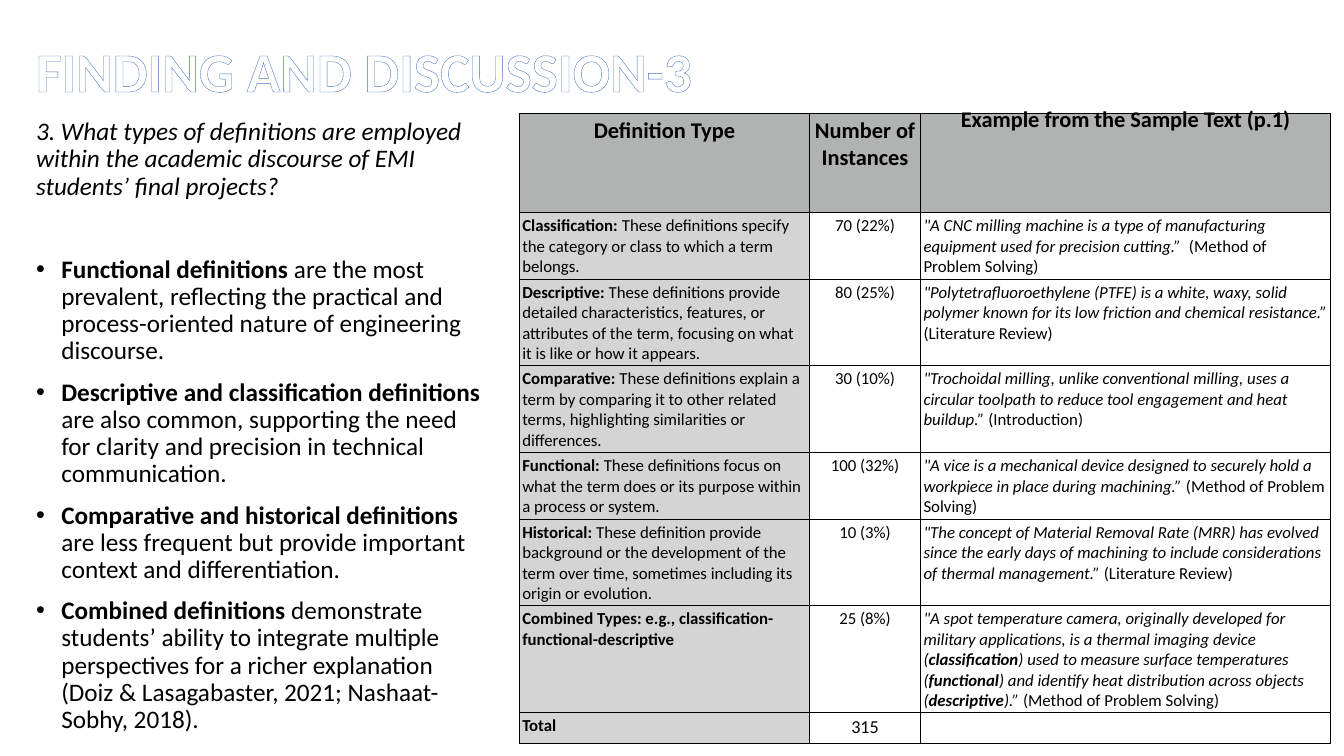
from dataclasses import dataclass

from lxml import etree
from pptx import Presentation
from pptx.dml.color import RGBColor
from pptx.enum.shapes import MSO_SHAPE
from pptx.enum.text import MSO_ANCHOR, PP_ALIGN
from pptx.oxml import parse_xml
from pptx.oxml.ns import nsdecls, qn
from pptx.util import Inches, Pt

RECTANGLE = MSO_SHAPE.RECTANGLE
TOP = MSO_ANCHOR.TOP
MIDDLE = MSO_ANCHOR.MIDDLE
LEFT = PP_ALIGN.LEFT
CENTER = PP_ALIGN.CENTER


@dataclass(frozen=True)
class Theme:
    font: str = "Calibri"
    white: RGBColor = RGBColor(0xFF, 0xFF, 0xFF)
    black: RGBColor = RGBColor(0, 0, 0)
    header: RGBColor = RGBColor(0xB0, 0xB3, 0xB2)
    label: RGBColor = RGBColor(0xD4, 0xD4, 0xD4)
    outline: str = "4472C4"
    title_size: Pt = Pt(39.6)
    body_size: Pt = Pt(18)
    header_size: Pt = Pt(16)
    cell_size: Pt = Pt(12)
    total_size: Pt = Pt(13)


theme = Theme()


def add_runs(paragraph, runs, size, color=theme.black):
    for text, style in runs:
        run = paragraph.add_run()
        run.text = text
        run.font.name = theme.font
        run.font.size = size
        run.font.color.rgb = color
        run.font.bold = "b" in style
        run.font.italic = "i" in style


prs = Presentation()
prs.slide_width = Inches(13.33)
prs.slide_height = Inches(7.5)
slide = prs.slides.add_slide(prs.slide_layouts[6])

title = slide.shapes.add_textbox(Inches(0.26), Inches(0.42), Inches(11.5), Inches(0.63)).text_frame
title.word_wrap = True
title.vertical_anchor = MIDDLE
heading = title.paragraphs[0]
heading.line_spacing = 0.9
add_runs(heading, [("FINDING AND DISCUSSION-3", "b")], theme.title_size, theme.white)
heading.runs[0].font._element.insert(0, parse_xml(
    f'<a:ln {nsdecls("a")} w="{Pt(0.8)}"><a:solidFill>'
    f'<a:srgbClr val="{theme.outline}"/></a:solidFill></a:ln>'))

findings_panel = slide.shapes.add_shape(RECTANGLE, Inches(0.26), Inches(1.13), Inches(4.61), Inches(6.24))
findings_panel.shadow.inherit = False
findings_panel.line.fill.background()
findings_panel.fill.solid()
findings_panel.fill.fore_color.rgb = theme.white
panel_color = findings_panel._element.spPr.find(qn("a:solidFill"))[0]
etree.SubElement(panel_color, qn("a:alpha"), val="50000")

findings = findings_panel.text_frame
findings.word_wrap = True
findings.vertical_anchor = TOP
question = findings.paragraphs[0]
question.alignment = LEFT
question.line_spacing = 0.9
add_runs(question, [("3. What types of definitions are employed within the academic discourse "
                     "of EMI students’ final projects?", "i")], theme.body_size)

FINDINGS = [
    ("Functional definitions",
     " are the most prevalent, reflecting the practical and process-oriented nature of engineering discourse."),
    ("Descriptive and classification definitions",
     " are also common, supporting the need for clarity and precision in technical communication."),
    ("Comparative and historical definitions",
     " are less frequent but provide important context and differentiation."),
    ("Combined definitions",
     " demonstrate students’ ability to integrate multiple perspectives for a richer explanation "
     "(Doiz & Lasagabaster, 2021; Nashaat-Sobhy, 2018)."),
]
for index, (subject, detail) in enumerate(FINDINGS):
    finding = findings.add_paragraph()
    finding.alignment = LEFT
    finding.line_spacing = 0.9
    finding.space_before = Pt(10 if index else 40)
    properties = finding._p.get_or_add_pPr()
    properties.set("marL", str(Inches(0.25)))
    properties.set("indent", str(-Inches(0.25)))
    etree.SubElement(properties, qn("a:buFont"), typeface="Arial")
    etree.SubElement(properties, qn("a:buChar"), char="•")
    add_runs(finding, [(subject, "b"), (detail, "")], theme.body_size)

DEFINITIONS = [
    ([("Definition Type", "b")], [("Number of Instances", "b")],
     [("Example from the Sample Text (p.1)", "b")]),
    ([("Classification: ", "b"),
      ("These definitions specify the category or class to which a term belongs.", "")],
     [("70 (22%)", "")],
     [("\"A CNC milling machine is a type of manufacturing equipment used for precision cutting.”  ", "i"),
      ("(Method of Problem Solving)", "")]),
    ([("Descriptive: ", "b"),
      ("These definitions provide detailed characteristics, features, or attributes of the term, "
       "focusing on what it is like or how it appears.", "")],
     [("80 (25%)", "")],
     [("\"Polytetrafluoroethylene (PTFE) is a white, waxy, solid polymer known for its low friction "
       "and chemical resistance.” ", "i"),
      ("(Literature Review)", "")]),
    ([("Comparative: ", "b"),
      ("These definitions explain a term by comparing it to other related terms, "
       "highlighting similarities or differences.", "")],
     [("30 (10%)", "")],
     [("\"Trochoidal milling, unlike conventional milling, uses a circular toolpath to reduce "
       "tool engagement and heat buildup.” ", "i"),
      ("(Introduction)", "")]),
    ([("Functional: ", "b"),
      ("These definitions focus on what the term does or its purpose within a process or system.", "")],
     [("100 (32%)", "")],
     [("\"A vice is a mechanical device designed to securely hold a workpiece in place "
       "during machining.” ", "i"),
      ("(Method of Problem Solving)", "")]),
    ([("Historical: ", "b"),
      ("These definition provide background or the development of the term over time, "
       "sometimes including its origin or evolution.", "")],
     [("10 (3%)", "")],
     [("\"The concept of Material Removal Rate (MRR) has evolved since the early days of machining "
       "to include considerations of thermal management.” ", "i"),
      ("(Literature Review)", "")]),
    ([("Combined Types: e.g., classification-functional-descriptive", "b")],
     [("25 (8%)", "")],
     [("\"A spot temperature camera, originally developed for military applications, "
       "is a thermal imaging device (", "i"),
      ("classification", "bi"), (") used to measure surface temperatures (", "i"),
      ("functional", "bi"), (") and identify heat distribution across objects (", "i"),
      ("descriptive", "bi"), (").” ", "i"), ("(Method of Problem Solving)", "")]),
    ([("Total", "b")], [("315", "")], []),
]
COLUMN_WIDTHS = [2.88, 1.1, 4.07]
ROW_HEIGHTS = [0.98, 0.66, 0.52, 0.75, 0.52, 0.52, 0.75, 0.3]

table = slide.shapes.add_table(len(DEFINITIONS), len(COLUMN_WIDTHS), Inches(5.15), Inches(1.13),
                               Inches(8.05), Inches(sum(ROW_HEIGHTS))).table
for column, width in zip(table.columns, COLUMN_WIDTHS):
    column.width = Inches(width)
for row, height in zip(table.rows, ROW_HEIGHTS):
    row.height = Inches(height)

for row_index, definition in enumerate(DEFINITIONS):
    for column_index, runs in enumerate(definition):
        cell = table.cell(row_index, column_index)
        cell.margin_left = cell.margin_right = Inches(0.03)
        cell.margin_top = cell.margin_bottom = Inches(0.03)
        size, fill = theme.cell_size, theme.white
        if row_index == 0:
            size, fill = theme.header_size, theme.header
        elif column_index == 0:
            fill = theme.label
        elif runs == [("315", "")]:
            size = theme.total_size
        cell.fill.solid()
        cell.fill.fore_color.rgb = fill
        for position, side in enumerate(("lnL", "lnR", "lnT", "lnB")):
            cell._tc.tcPr.insert(position, parse_xml(
                f'<a:{side} {nsdecls("a")} w="{Pt(0.75)}"><a:solidFill>'
                f'<a:srgbClr val="{theme.black}"/></a:solidFill></a:{side}>'))
        entry = cell.text_frame.paragraphs[0]
        entry.alignment = CENTER if row_index == 0 or column_index == 1 else LEFT
        if runs:
            add_runs(entry, runs, size)
        else:
            entry.font.size = size

table.cell(0, 2).text_frame.paragraphs[0].line_spacing = Pt(11.7)

prs.save("out.pptx")
